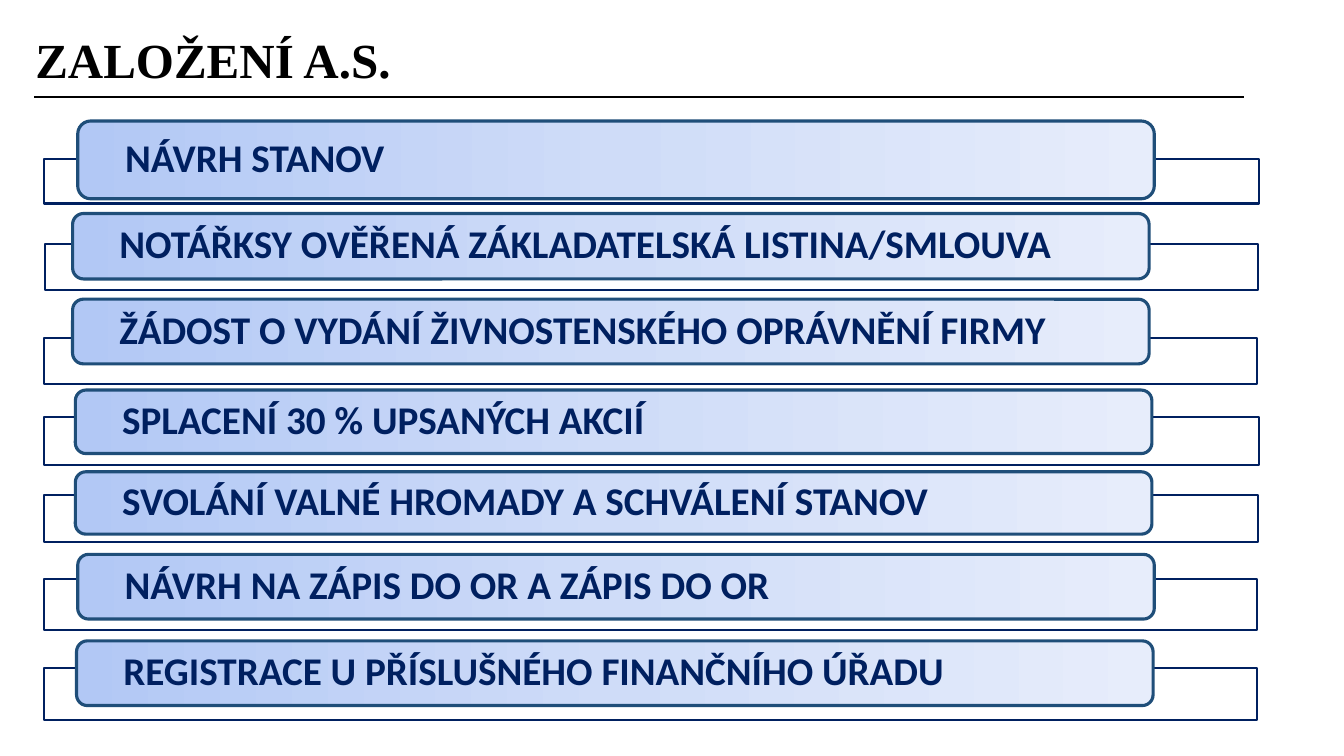
from copy import deepcopy

from lxml import etree
from pptx import Presentation
from pptx import util as u
from pptx.dml import color
from pptx.enum import shapes, text
from pptx.oxml import ns

NAVY, BLUE, BLACK, WHITE = "002060", "1F4E79", "000000", "FFFFFF"
GRADIENT = [(0, "B2C8F5"), (0.5, "CFDCF8"), (1, "E7EDFB")]

# Step text; frame left, top, width, height; bar left, top, height (cm)
STEPS = [
    ("NÁVRH STANOV", (1.12, 4.01, 30.61, 1.12), (1.96, 3.05, 1.96)),
    ("NOTÁŘKSY OVĚŘENÁ ZÁKLADATELSKÁ LISTINA/SMLOUVA",
     (1.14, 6.15, 30.56, 1.17), (1.83, 5.38, 1.65)),
    ("ŽÁDOST O VYDÁNÍ ŽIVNOSTENSKÉHO OPRÁVNĚNÍ FIRMY",
     (1.12, 8.51, 30.56, 1.17), (1.83, 7.54, 1.63)),
    ("SPLACENÍ 30 % UPSANÝCH AKCIÍ",
     (1.12, 10.52, 30.61, 1.19), (1.9, 9.83, 1.6)),
    ("SVOLÁNÍ VALNÉ HROMADY A SCHVÁLENÍ STANOV",
     (1.12, 12.47, 30.58, 1.19), (1.9, 11.89, 1.57)),
    ("NÁVRH NA ZÁPIS DO OR A ZÁPIS DO OR",
     (1.12, 14.58, 30.56, 1.3), (1.96, 13.97, 1.63)),
    ("REGISTRACE U PŘÍSLUŠNÉHO FINANČNÍHO ÚŘADU",
     (1.12, 16.84, 30.56, 1.3), (1.93, 16.15, 1.63)),
]
BAR_WIDTH = 27.13


def rgb(value):
    return color.RGBColor.from_string(value)


class Deck:
    def __init__(self, slide):
        self.s = slide

    def label(self, sp, words, font, size, ink, margins):
        tf = sp.text_frame
        tf.text = words
        tf.word_wrap = True
        tf.auto_size = text.MSO_AUTO_SIZE.NONE
        tf.vertical_anchor = text.MSO_ANCHOR.MIDDLE
        tf.margin_left = tf.margin_right = u.Cm(margins[0])
        tf.margin_top = tf.margin_bottom = u.Cm(margins[1])
        p = tf.paragraphs[0]
        p.alignment = text.PP_ALIGN.LEFT
        p.line_spacing = 0.9
        p.font.name, p.font.size, p.font.bold = font, u.Pt(size), True
        p.font.color.rgb = rgb(ink)

    def title(self, words, left, top, width, height):
        sp = self.s.shapes.title
        sp.left, sp.top = u.Cm(left), u.Cm(top)
        sp.width, sp.height = u.Cm(width), u.Cm(height)
        self.label(sp, words, "Times New Roman", 35, BLACK, (0.25, 0.13))

    def box(self, kind, at, line, weight):
        sp = self.s.shapes.add_shape(kind, *map(u.Cm, at))
        sp.shadow.inherit = False
        sp.line.color.rgb = rgb(line)
        sp.line.width = u.Pt(weight)
        return sp

    def frame(self, at):
        sp = self.box(shapes.MSO_SHAPE.RECTANGLE, at, NAVY, 1.5)
        sp.fill.solid()
        sp.fill.fore_color.rgb = rgb(WHITE)
        # 90 % opacity
        fill = sp._element.spPr.find(ns.qn("a:solidFill"))
        etree.SubElement(fill[0], ns.qn("a:alpha")).set("val", "90000")

    def bar(self, words, at):
        sp = self.box(shapes.MSO_SHAPE.ROUNDED_RECTANGLE, at, BLUE, 2.25)
        sp.fill.gradient()
        sp.fill.gradient_angle = 0
        # Third gradient stop
        stops = sp._element.spPr.find(".//" + ns.qn("a:gsLst"))
        stops.insert(1, deepcopy(stops[0]))
        for stop, (position, shade) in zip(sp.fill.gradient_stops, GRADIENT):
            stop.position = position
            stop.color.rgb = rgb(shade)
        self.label(sp, words, "Calibri", 28, NAVY, (1.1, 0))

    def rule(self, x1, x2, y):
        c = self.s.shapes.add_connector(
            shapes.MSO_CONNECTOR.STRAIGHT, *map(u.Cm, (x1, y, x2, y)))
        c.line.color.rgb = rgb(BLACK)
        c.line.width = u.Pt(1.5)
        etree.SubElement(c._element.spPr, ns.qn("a:effectLst"))


def main():
    prs = Presentation()
    prs.slide_width, prs.slide_height = u.Cm(33.87), u.Cm(19.05)
    deck = Deck(prs.slides.add_slide(prs.slide_layouts[5]))

    # Heading
    deck.title("ZALOŽENÍ A.S.", 0.64, 0.74, 25.53, 1.7)
    deck.rule(0.86, 31.34, 2.44)

    # Founding steps
    for words, frame, (left, top, height) in STEPS:
        deck.frame(frame)
        deck.bar(words, (left, top, BAR_WIDTH, height))

    prs.save("out.pptx")


if __name__ == "__main__":
    main()
